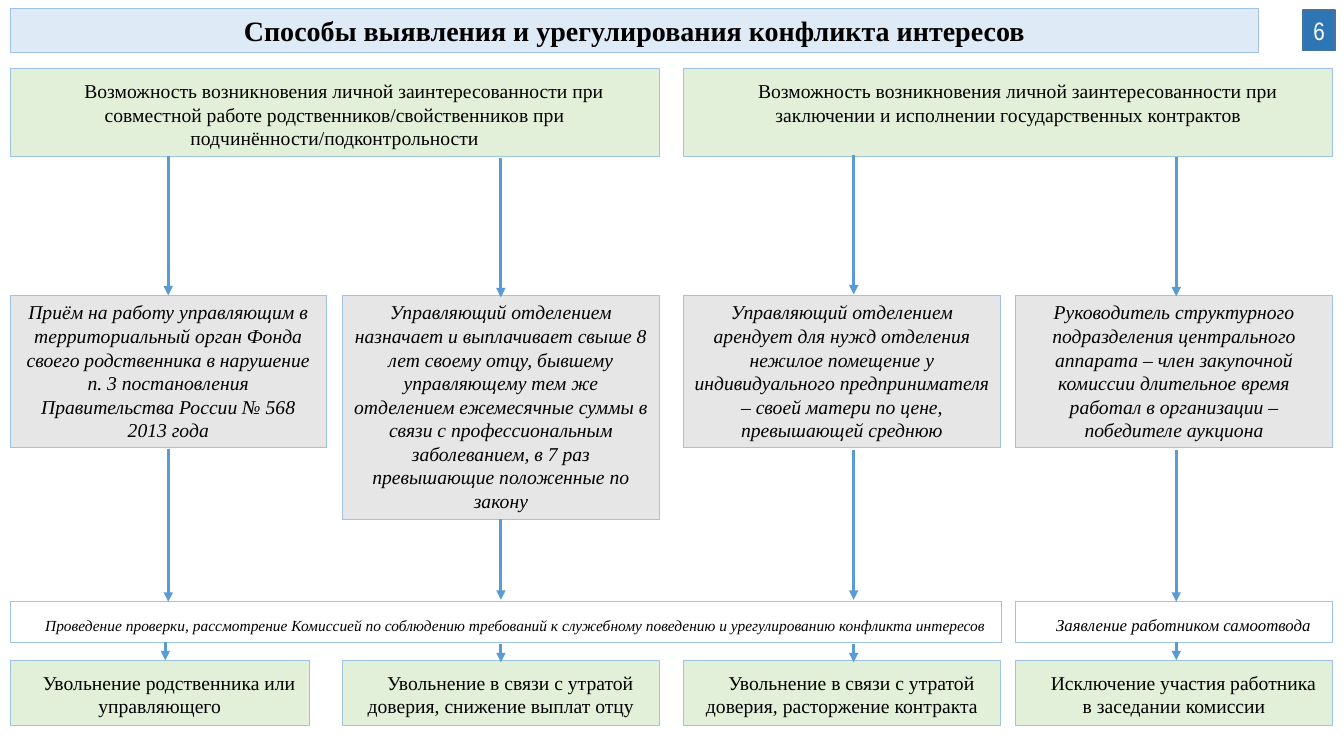
from dataclasses import dataclass

from lxml.etree import SubElement
from pptx import Presentation
from pptx.dml.color import RGBColor as RGB
from pptx.enum.shapes import MSO_CONNECTOR as Link, MSO_SHAPE as Form
from pptx.enum.text import MSO_ANCHOR as Anchor, MSO_AUTO_SIZE as Fit, PP_ALIGN as Align
from pptx.oxml.ns import qn
from pptx.shapes.base import BaseShape
from pptx.slide import Slide
from pptx.util import Pt


@dataclass(frozen=True)
class Theme:
    face: str = "Times New Roman"
    slim: str = "Arial Narrow"
    ink: str = "000000"
    white: str = "FFFFFF"
    blue: str = "DEEBF7"
    green: str = "E2F0D9"
    grey: str = "E7E6E6"
    edge: str = "9DC3E6"
    arrow: str = "5B9BD5"
    badge: str = "2E75B6"
    rim: str = "43739E"
    head: float = 20
    page: float = 18
    body: float = 14
    note: float = 12
    small: float = 11
    lead: float = 1.0


T = Theme()


@dataclass(frozen=True)
class Area:
    left: float
    top: float
    width: float
    height: float


@dataclass(frozen=True)
class Box:
    area: Area
    text: str
    fill: str
    size: float = T.body
    bold: bool = False
    slant: bool = False
    inset: bool = False  # first line indented and set lower


@dataclass(frozen=True)
class Arrow:
    x: float
    top: float
    end: float


LEFT, MID, RIGHT, LAST = COLS = (7.2, 244.8, 488.4, 725.6)
WIDE, STEP = 226.1, 463.7
AXES = (120.2, 357.8, 609.8, 840.2)

TITLE = Box(Area(LEFT, 5.8, 892.1, 31.7),
            "Способы выявления и урегулирования конфликта интересов",
            T.blue, T.head, bold=True)

RISKS = (
    (LEFT, "Возможность возникновения личной заинтересованности при совместной работе "
           "родственников/свойственников при подчинённости/подконтрольности"),
    (RIGHT, "Возможность возникновения личной заинтересованности при заключении и "
            "исполнении государственных контрактов"),
)
CASES = (
    (109, "Приём на работу управляющим в территориальный орган Фонда своего родственника "
          "в нарушение\nп. 3 постановления Правительства России № 568 2013 года"),
    (160, "Управляющий отделением назначает и выплачивает свыше 8 лет своему отцу, бывшему "
          "управляющему тем же отделением ежемесячные суммы в связи с профессиональным "
          "заболеванием, в 7 раз превышающие положенные по закону"),
    (109, "Управляющий отделением арендует для нужд отделения нежилое помещение у "
          "индивидуального предпринимателя – своей матери по цене, превышающей среднюю"),
    (109, "Руководитель структурного подразделения центрального аппарата – член закупочной "
          "комиссии длительное время работал в организации – победителе аукциона"),
)
CHECKS = (
    (LEFT, 708.5, T.small, "Проведение проверки, рассмотрение Комиссией по соблюдению требований "
                           "к служебному поведению и урегулированию конфликта интересов"),
    (LAST, WIDE, T.note, "Заявление работником самоотвода"),
)
RESULTS = (
    (213.8, "Увольнение родственника или управляющего"),
    (WIDE, "Увольнение в связи с утратой доверия, снижение выплат отцу"),
    (WIDE, "Увольнение в связи с утратой доверия, расторжение контракта"),
    (WIDE, "Исключение участия работника в заседании комиссии"),
)

BOXES = (
    [Box(Area(x, 49, STEP, 63), text, T.green, inset=True) for x, text in RISKS]
    + [Box(Area(x, 211, WIDE, high), text, T.grey, slant=True)
       for x, (high, text) in zip(COLS, CASES)]
    + [Box(Area(x, 429.8, wide, 29), text, T.white, size, slant=True, inset=True)
       for x, wide, size, text in CHECKS]
    + [Box(Area(x, 471.6, wide, 46.4), text, T.green, inset=True)
       for x, (wide, text) in zip(COLS, RESULTS)]
)

ARROWS = (
    [Arrow(x, top, top + 99.4) for x, top in zip(AXES, (111.6, 113, 110.9, 112.3))]
    + [Arrow(x, top, end) for x, top, end in
       zip(AXES, (320.4, 370.8, 321.1, 321.1), (429.8, 428.4, 428.4, 429.8))]
    + [Arrow(x, top, top + 13) for x, top in
       zip((118.1, *AXES[1:]), (458.6, 460.1, 460.1, 458.6))]
)


def place(shape: BaseShape, area: Area, fill: str, edge: str, weight: float) -> None:
    """Set the bounds, fill and outline."""
    shape.left, shape.top = Pt(area.left), Pt(area.top)
    shape.width, shape.height = Pt(area.width), Pt(area.height)
    shape.fill.solid()
    shape.fill.fore_color.rgb = RGB.from_string(fill)
    shape.line.color.rgb = RGB.from_string(edge)
    shape.line.width = Pt(weight)


def write(shape: BaseShape, box: Box) -> None:
    frame = shape.text_frame
    frame.text = box.text
    frame.word_wrap = True
    frame.auto_size = Fit.NONE
    frame.vertical_anchor = Anchor.TOP
    frame.margin_left = frame.margin_right = Pt(7.2)
    frame.margin_top = Pt(3.6 + (0.94 * (18 - box.size) if box.inset else 0))
    frame.margin_bottom = Pt(3.6)
    for para in frame.paragraphs:
        para.alignment = Align.CENTER
        para.line_spacing = T.lead
        para.space_before = para.space_after = Pt(0)
        font = para.font
        font.name, font.size = T.face, Pt(box.size)
        font.bold, font.italic = box.bold, box.slant
        font.color.rgb = RGB.from_string(T.ink)
        if box.inset:
            para._p.get_or_add_pPr().set("indent", str(Pt(13.5)))


def add_rect(slide: Slide) -> BaseShape:
    shape = slide.shapes.add_shape(Form.RECTANGLE, 0, 0, 0, 0)
    shape.shadow.inherit = False
    return shape


def add_box(slide: Slide, box: Box) -> None:
    shape = add_rect(slide)
    place(shape, box.area, box.fill, T.edge, 0.75)
    write(shape, box)


def add_arrow(slide: Slide, arrow: Arrow) -> None:
    x = Pt(arrow.x)
    line = slide.shapes.add_connector(Link.STRAIGHT, x, Pt(arrow.top), x, Pt(arrow.end))
    line.line.color.rgb = RGB.from_string(T.arrow)
    line.line.width = Pt(2.25)
    SubElement(line.line._get_or_add_ln(), qn("a:tailEnd"), type="triangle")
    SubElement(line._element.spPr, qn("a:effectLst"))


def add_page(slide: Slide, text: str) -> None:
    """Draw the page number badge."""
    shape = add_rect(slide)
    place(shape, Area(930.7, 7.2, 23, 28.8), T.badge, T.rim, 1)
    frame = shape.text_frame
    frame.text = text
    frame.word_wrap = False
    frame.vertical_anchor = Anchor.MIDDLE
    para = frame.paragraphs[0]
    para.alignment = Align.CENTER
    para.font.name, para.font.size = T.slim, Pt(T.page)
    para.font.color.rgb = RGB.from_string(T.white)


def main() -> None:
    deck = Presentation()
    deck.slide_width, deck.slide_height = Pt(960), Pt(540)
    slide = deck.slides.add_slide(deck.slide_layouts[5])
    title = slide.shapes.title
    place(title, TITLE.area, TITLE.fill, T.edge, 0.75)
    write(title, TITLE)
    for box in BOXES:
        add_box(slide, box)
    for arrow in ARROWS:
        add_arrow(slide, arrow)
    add_page(slide, "6")
    deck.save("out.pptx")


if __name__ == "__main__":
    main()
